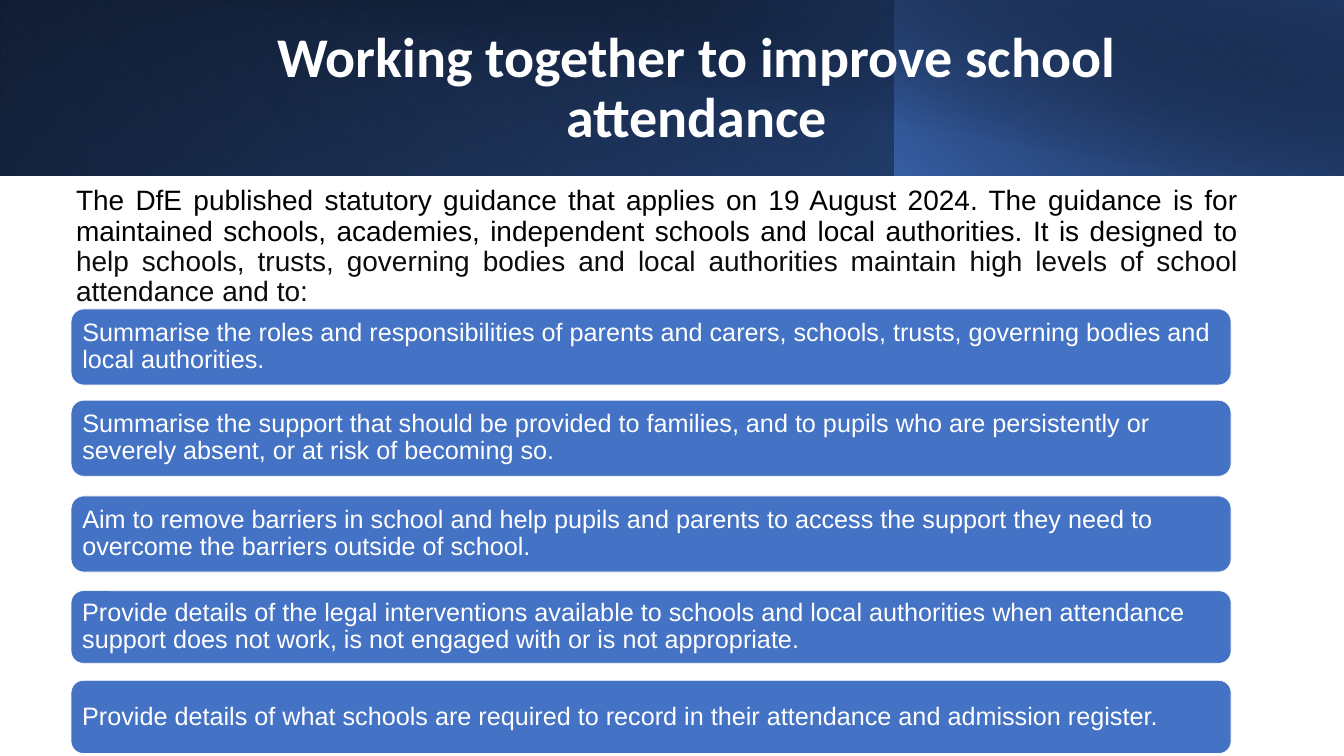
from lxml import etree
from pptx import Presentation
from pptx.dml.color import RGBColor
from pptx.enum.shapes import MSO_SHAPE
from pptx.enum.text import MSO_ANCHOR, MSO_AUTO_SIZE, PP_ALIGN
from pptx.oxml.ns import qn
from pptx.util import Inches, Pt

RECTANGLE, ROUNDED = MSO_SHAPE.RECTANGLE, MSO_SHAPE.ROUNDED_RECTANGLE
LEFT, CENTER, JUSTIFY = PP_ALIGN.LEFT, PP_ALIGN.CENTER, PP_ALIGN.JUSTIFY
MIDDLE = MSO_ANCHOR.MIDDLE
NO_FIT = MSO_AUTO_SIZE.NONE

COLORS = {
    "black": "000000",
    "white": "FFFFFF",
    "blue": "4472C4",
    "mid blue": "2F5597",
    "navy": "203864",
    "ink": "0B0C0C",
}


def color(name):
    return RGBColor.from_string(COLORS[name])


def write(frame, *runs, size, font="Arial", bold=False, align=LEFT, inset=(0.1, 0.05)):
    """Fill a text frame with one paragraph of (text, colour) runs."""
    frame.word_wrap = True
    frame.auto_size = NO_FIT
    frame.vertical_anchor = MIDDLE
    frame.margin_left = frame.margin_right = Inches(inset[0])
    frame.margin_top = frame.margin_bottom = Inches(inset[1])
    paragraph = frame.paragraphs[0]
    paragraph.alignment = align
    paragraph.line_spacing = 0.9
    for text, shade in runs:
        run = paragraph.add_run()
        run.text = text
        run.font.name = font
        run.font.size = Pt(size)
        run.font.bold = bold
        run.font.color.rgb = color(shade)


prs = Presentation()
prs.slide_width = Inches(26.66)
prs.slide_height = Inches(15)
slide = prs.slides.add_slide(prs.slide_layouts[5])

# Header band: left, width, height, rotation, mirrored, clockwise angle,
# then gradient stops as (position %, colour, opacity %)
header_layers = [
    (0, 26.66, 3.48, 0, True, 140, [(0, "black", 100), (100, "mid blue", 100)]),
    (0, 17.75, 3.48, 180, True, 230, [(20, "blue", 0), (100, "navy", 55)]),
    (17.75, 8.92, 3.48, 0, True, 220, [(0, "blue", 66), (100, "black", 30)]),
    (1, 25.66, 3.49, 0, False, 280, [(50, "black", 0), (99, "navy", 52)]),
]
for left, width, height, rotation, mirrored, angle, stops in header_layers:
    layer = slide.shapes.add_shape(
        RECTANGLE, Inches(left), 0, Inches(width), Inches(height))
    layer.shadow.inherit = False
    layer.line.fill.background()
    layer.rotation = rotation
    properties = layer.element.spPr
    if mirrored:
        properties.find(qn("a:xfrm")).set("flipH", "1")
    layer.fill.gradient()
    layer.fill.gradient_angle = 360 - angle
    for stop, (position, shade, _) in zip(layer.fill.gradient_stops, stops):
        stop.position = position / 100
        stop.color.rgb = color(shade)
    gradient = properties.find(qn("a:gradFill"))
    for stop_color, (_, _, opacity) in zip(gradient.iter(qn("a:srgbClr")), stops):
        if opacity < 100:
            alpha = etree.SubElement(stop_color, qn("a:alpha"))
            alpha.set("val", str(opacity * 1000))

# Title, moved in front of the header band
title = slide.shapes.title
title.left, title.top = Inches(3), Inches(0.64)
title.width, title.height = Inches(21.64), Inches(2.26)
write(title.text_frame, ("Working together to improve school attendance", "white"),
      size=80, font="Calibri", bold=True, align=CENTER)
slide.shapes.element.append(title.element)

intro = slide.shapes.add_textbox(
    Inches(1.41), Inches(0.19), Inches(23.23), Inches(9.43))
write(
    intro.text_frame,
    ("The DfE published statutory guidance that applies on 19 August 2024. "
     "The guidance is for maintained schools, academies, independent schools "
     "and local authorities. It is designed to ", "black"),
    ("help schools, trusts, governing bodies and local authorities maintain "
     "high levels of school attendance and to:", "ink"),
    size=40, align=JUSTIFY)

# Aims of the guidance: top, height, text
aims = [
    (6.13, 1.51, "Summarise the roles and responsibilities of parents and carers, "
     "schools, trusts, governing bodies and local authorities."),
    (7.94, 1.51, "Summarise the support that should be provided to families, and to "
     "pupils who are persistently or severely absent, or at risk of becoming so."),
    (9.84, 1.51, "Aim to remove barriers in school and help pupils and parents to "
     "access the support they need to overcome the barriers outside of school."),
    (11.72, 1.44, "Provide details of the legal interventions available to schools and "
     "local authorities when attendance support does not work, is not engaged with "
     "or is not appropriate."),
    (13.5, 1.45, "Provide details of what schools are required to record in their "
     "attendance and admission register."),
]
for top, height, text in aims:
    aim = slide.shapes.add_shape(
        ROUNDED, Inches(1.41), Inches(top), Inches(23.01), Inches(height))
    aim.shadow.inherit = False
    aim.fill.solid()
    aim.fill.fore_color.rgb = color("blue")
    aim.line.color.rgb = color("white")
    aim.line.width = Pt(1)
    write(aim.text_frame, (text, "white"), size=36, inset=(0.15, 0.15))

prs.save("out.pptx")
